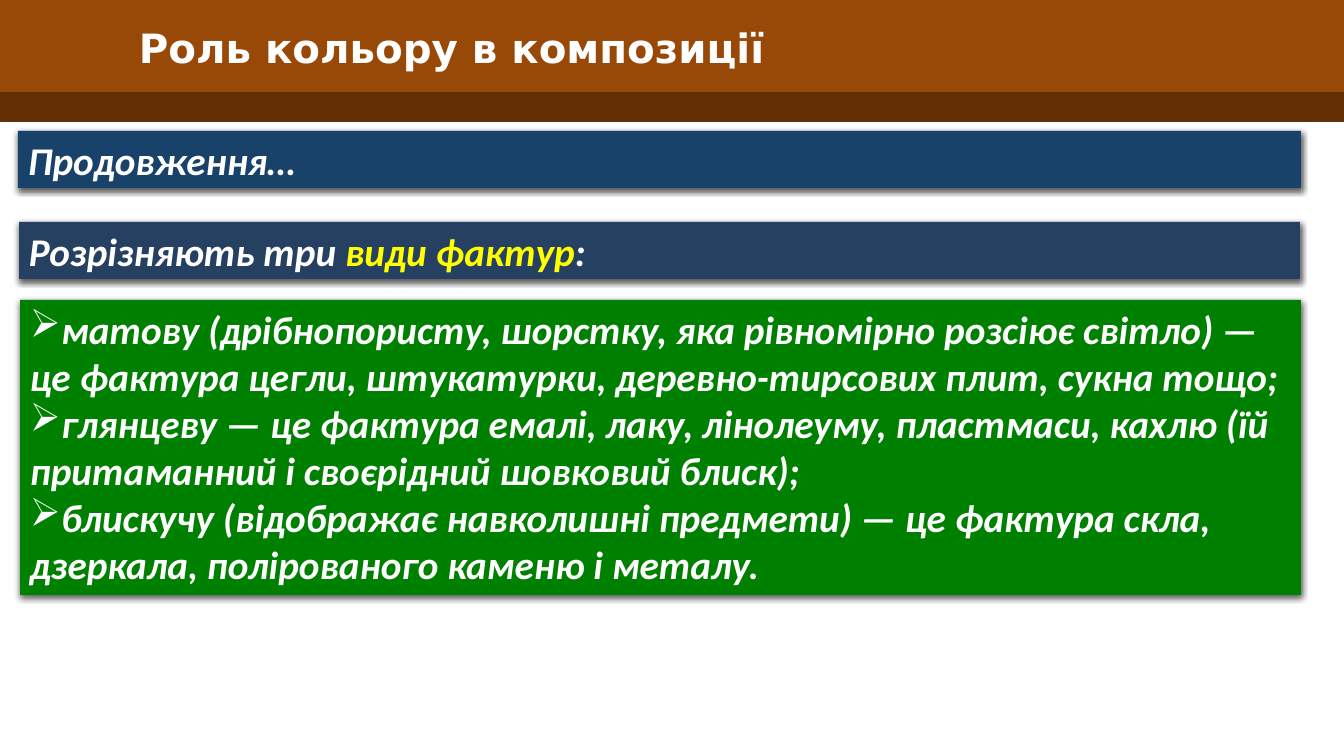
from lxml.etree import SubElement
from pptx import Presentation
from pptx.dml.color import RGBColor
from pptx.enum.shapes import MSO_SHAPE as Shape
from pptx.enum.text import MSO_ANCHOR as Anchor, MSO_AUTO_SIZE as AutoSize, PP_ALIGN as Align
from pptx.oxml.ns import qn
from pptx.util import Pt

EMU_PER_PX = 914400 / 100.8
COLORS = {
    "band": "984807",
    "strip": "642F04",
    "blue": "19426B",
    "navy": "254061",
    "green": "008000",
    "white": "FFFFFF",
    "yellow": "FFFF00",
    "shadow": "000000",
}


def px(length):
    return round(length * EMU_PER_PX)


def color(name):
    return RGBColor.from_string(COLORS[name])


class SlideBuilder:
    title_font, title_size = "DejaVu Sans", 28.8
    body_font, body_size = "Calibri", 28

    def __init__(self, slide):
        self.slide = slide

    def bar(self, left, top, width, height, fill):
        shape = self.slide.shapes.add_shape(
            Shape.RECTANGLE, px(left), px(top), px(width), px(height))
        shape.fill.solid()
        shape.fill.fore_color.rgb = color(fill)
        shape.line.fill.background()
        shape.shadow.inherit = False
        return shape

    def title(self, left, top, width, height, text):
        box = self.slide.shapes.add_textbox(px(left), px(top), px(width), px(height))
        frame = box.text_frame
        frame.word_wrap = True
        frame.vertical_anchor = Anchor.MIDDLE
        paragraph = frame.paragraphs[0]
        paragraph.text = text
        font = paragraph.font
        font.name, font.size, font.bold = self.title_font, Pt(self.title_size), True
        font.color.rgb = color("white")

    def panel(self, left, top, width, height, fill, paragraphs, bullet=None):
        """Each paragraph is a list of (text, color name) runs."""
        shape = self.bar(left, top, width, height, fill)
        self.drop_shadow(shape)
        frame = shape.text_frame
        frame.word_wrap = True
        frame.auto_size = AutoSize.SHAPE_TO_FIT_TEXT
        frame.vertical_anchor = Anchor.TOP
        for index, runs in enumerate(paragraphs):
            paragraph = frame.add_paragraph() if index else frame.paragraphs[0]
            paragraph.alignment = Align.LEFT
            if bullet:
                properties = paragraph._p.get_or_add_pPr()
                SubElement(properties, qn("a:buChar"), char=bullet)
            font = paragraph.font
            font.name, font.size = self.body_font, Pt(self.body_size)
            font.bold = font.italic = True
            for text, name in runs:
                run = paragraph.add_run()
                run.text = text
                run.font.color.rgb = color(name)

    def drop_shadow(self, shape):
        effects = shape._element.spPr.find(qn("a:effectLst"))
        shadow = SubElement(effects, qn("a:outerShdw"), blurRad=str(Pt(4.5)),
                            dist=str(Pt(1.5)), dir="5400000", rotWithShape="0")
        tint = SubElement(shadow, qn("a:srgbClr"), val=COLORS["shadow"])
        SubElement(tint, qn("a:alpha"), val="63000")


def main():
    presentation = Presentation()
    presentation.slide_width, presentation.slide_height = px(1344), px(756)
    builder = SlideBuilder(presentation.slides.add_slide(presentation.slide_layouts[6]))

    # Header
    builder.bar(0, 88, 1344, 34, "strip")
    builder.bar(0, 0, 1344, 92, "band")
    builder.title(129, 18, 998, 58, "Роль кольору в композиції")

    # Lead-in panels
    builder.panel(18, 131, 1283, 57, "blue", [[("Продовження…", "white")]])
    builder.panel(19, 222, 1281, 57, "navy", [[
        ("Розрізняють три ", "white"), ("види фактур", "yellow"), (":", "white")]])

    # Kinds of texture
    textures = [
        "матову (дрібнопористу, шорстку, яка рівномірно розсіює світло) — "
        "це фактура цегли, штукатурки, деревно-тирсових плит, сукна тощо;",
        "глянцеву — це фактура емалі, лаку, лінолеуму, пластмаси, кахлю "
        "(їй притаманний і своєрідний шовковий блиск);",
        "блискучу (відображає навколишні предмети) — це фактура скла, "
        "дзеркала, полірованого каменю і металу.",
    ]
    builder.panel(20, 300, 1281, 295, "green",
                  [[(text, "white")] for text in textures], bullet="➢")

    presentation.save("out.pptx")


if __name__ == "__main__":
    main()
